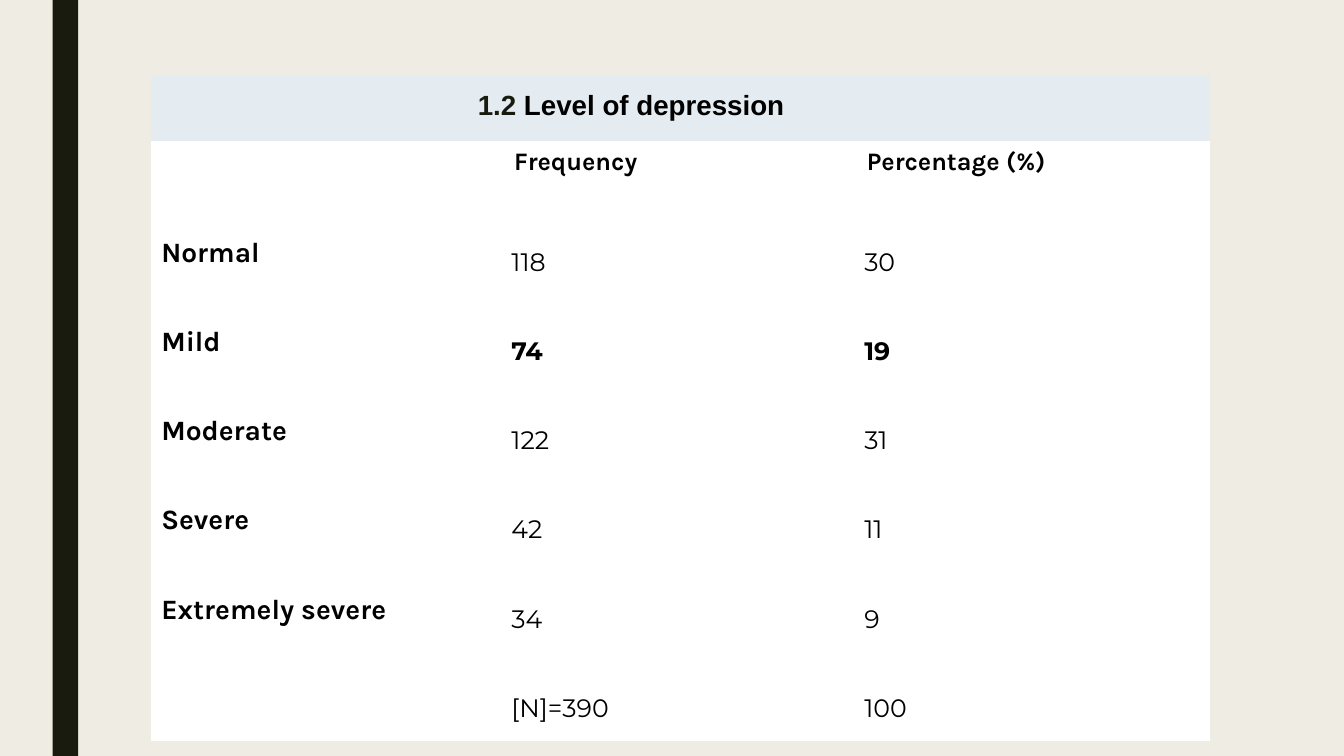
from dataclasses import dataclass

from lxml.etree import SubElement
from pptx import Presentation
from pptx.dml.color import RGBColor as RGB
from pptx.enum.shapes import MSO_SHAPE as Shape
from pptx.enum.text import MSO_ANCHOR as Anchor, MSO_AUTO_SIZE as AutoSize, PP_ALIGN as Align
from pptx.oxml.ns import qn
from pptx.util import Cm, Pt


@dataclass(frozen=True)
class Theme:
    background: RGB = RGB(0xEF, 0xED, 0xE3)
    dark: RGB = RGB(0x19, 0x1B, 0x0E)
    band: RGB = RGB(0xE4, 0xEC, 0xF1)
    white: RGB = RGB(0xFF, 0xFF, 0xFF)
    black: RGB = RGB(0, 0, 0)
    title_font: str = "Arial"
    label_font: str = "Karla"
    value_font: str = "Montserrat"
    title_size: float = 19.8
    label_size: float = 20
    text_size: float = 18


@dataclass(frozen=True)
class Level:
    label: str
    frequency: str
    percentage: str
    bold: bool = False


THEME = Theme()
LEFT, WIDTH = Cm(3.81), Cm(26.67)
TITLE_TOP, TITLE_HEIGHT = Cm(1.9), Cm(1.68)
ROW_HEIGHT, TOTAL_HEIGHT = Cm(2.25), Cm(1.57)
HEADERS = ("", "Frequency", "Percentage (%)")
LEVELS = (
    Level("Normal", "118", "30"),
    Level("Mild", "74", "19", bold=True),
    Level("Moderate", "122", "31"),
    Level("Severe", "42", "11"),
    Level("Extremely severe", "34", "9"),
    Level("", "[N]=390", "100"),
)


def add_run(p, text: str, font: str, size: float, color: RGB, bold: bool = True) -> None:
    r = p.add_run()
    r.text = text
    r.font.name, r.font.size, r.font.bold = font, Pt(size), bold
    r.font.color.rgb = color


def style_cell(cell, bottom: float = 1) -> None:
    """Fill a cell white and give it white borders, widths in points."""
    cell.fill.solid()
    cell.fill.fore_color.rgb = THEME.white
    tc_pr = cell._tc.get_or_add_tcPr()
    for i, (side, width) in enumerate({"L": 1, "R": 1, "T": 1, "B": bottom}.items()):
        ln = SubElement(tc_pr, qn(f"a:ln{side}"), w=str(Pt(width)))
        SubElement(SubElement(ln, qn("a:solidFill")), qn("a:srgbClr"), val=str(THEME.white))
        tc_pr.insert(i, ln)


def write_label(cell, text: str, size: float) -> None:
    if text:
        add_run(cell.text_frame.paragraphs[0], text, THEME.label_font, size, THEME.black)


def write_value(cell, text: str, bold: bool) -> None:
    cell.margin_left = cell.margin_right = Cm(0.19)
    cell.margin_top = cell.margin_bottom = 0
    p = cell.text_frame.paragraphs[0]
    p.alignment, p.line_spacing, p.space_after = Align.JUSTIFY, 1.5, Pt(10)
    add_run(p, text, THEME.value_font, THEME.text_size, THEME.black, bold)


def add_side_bar(s, height: int) -> None:
    sp = s.shapes.add_shape(Shape.RECTANGLE, Cm(1.33), 0, Cm(0.64), height)
    sp.shadow.inherit = False
    sp.fill.solid()
    sp.fill.fore_color.rgb = THEME.dark
    sp.line.fill.background()


def set_title(s) -> None:
    sp = s.shapes.title
    sp.left, sp.top, sp.width, sp.height = LEFT, TITLE_TOP, WIDTH, TITLE_HEIGHT
    sp.fill.solid()
    sp.fill.fore_color.rgb = THEME.band
    tf = sp.text_frame
    tf.word_wrap, tf.auto_size, tf.vertical_anchor = True, AutoSize.NONE, Anchor.MIDDLE
    tf.margin_left, tf.margin_top, tf.margin_bottom = Cm(8.23), 0, Cm(0.2)
    p = tf.paragraphs[0]
    p.alignment = Align.LEFT
    add_run(p, "1.2 ", THEME.title_font, THEME.title_size, THEME.dark)
    add_run(p, "Level of depression", THEME.title_font, THEME.title_size, THEME.black)


def add_levels_table(s) -> None:
    height = ROW_HEIGHT * len(LEVELS) + TOTAL_HEIGHT
    table = s.shapes.add_table(len(LEVELS) + 1, len(HEADERS), LEFT,
                               TITLE_TOP + TITLE_HEIGHT, WIDTH, height).table
    table.horz_banding = False
    for row in table.rows:
        row.height = ROW_HEIGHT
    table.rows[len(LEVELS)].height = TOTAL_HEIGHT

    # Header row
    for col, header in enumerate(HEADERS):
        style_cell(table.cell(0, col), bottom=3)
        write_label(table.cell(0, col), header, THEME.text_size)

    # Levels and total
    for row, level in enumerate(LEVELS, start=1):
        for col in range(len(HEADERS)):
            style_cell(table.cell(row, col))
        write_label(table.cell(row, 0), level.label, THEME.label_size)
        write_value(table.cell(row, 1), level.frequency, level.bold)
        write_value(table.cell(row, 2), level.percentage, level.bold)


def main() -> None:
    prs = Presentation()
    prs.slide_width, prs.slide_height = Cm(33.87), Cm(19.05)
    s = prs.slides.add_slide(prs.slide_layouts[5])
    s.background.fill.solid()
    s.background.fill.fore_color.rgb = THEME.background
    add_side_bar(s, prs.slide_height)
    set_title(s)
    add_levels_table(s)
    prs.save("out.pptx")


if __name__ == "__main__":
    main()
